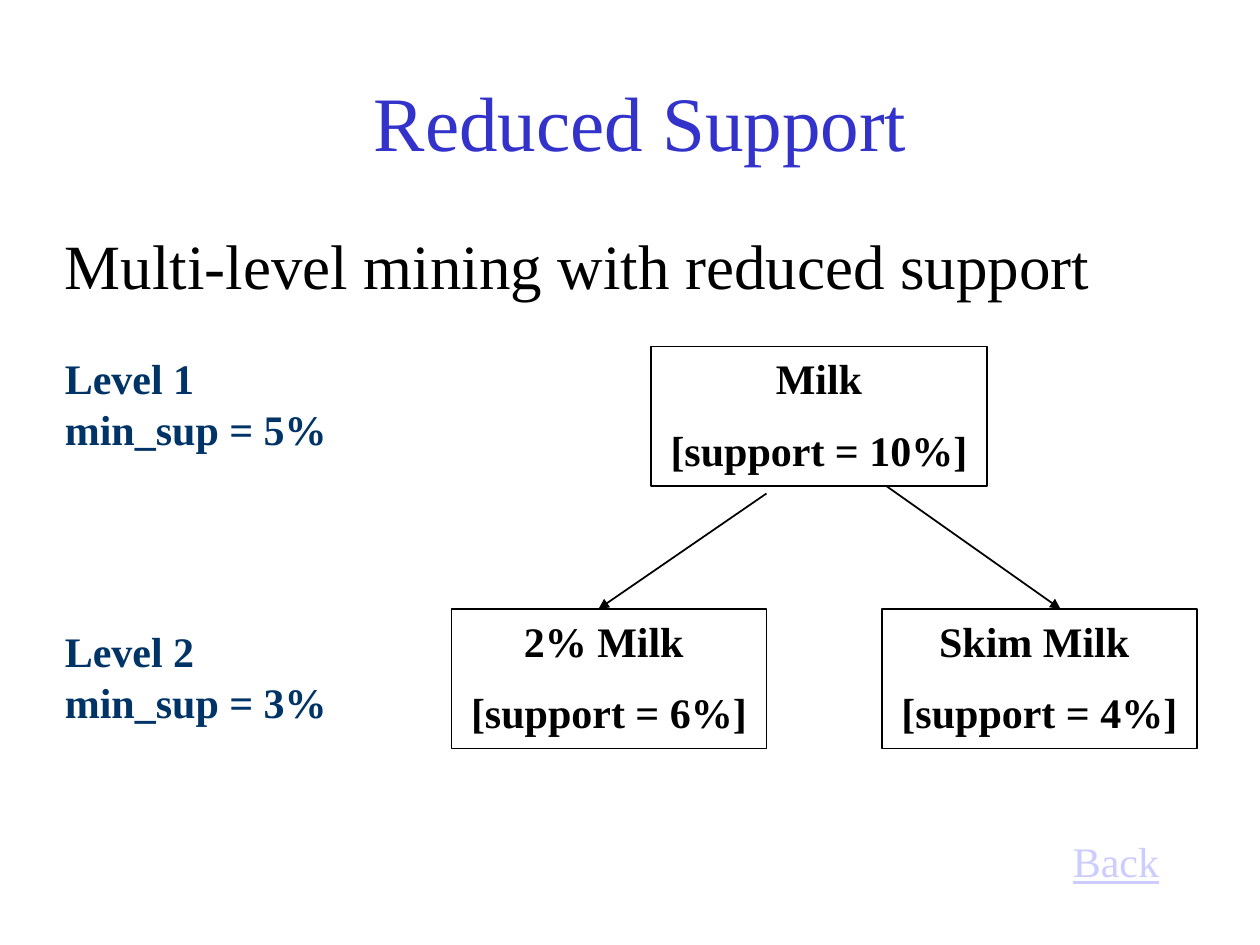
from lxml import etree
from pptx import Presentation
from pptx import util as u
from pptx.dml.color import RGBColor
from pptx.enum import shapes, text
from pptx.oxml.ns import qn

CELL = u.Inches(10) / 120  # the page is a grid of 120 columns by 90 rows
FONT = "Times New Roman"
BLACK, WHITE, NAVY = "000000", "FFFFFF", "003366"
BOX_HEIGHT = 13.3
LEVEL_SIZE = (27.4, 10.8)


def grid(*cells):
    return [u.Emu(round(cell * CELL)) for cell in cells]


def colour(hex_string):
    return RGBColor.from_string(hex_string)


def write(shape, lines, size=24, ink=BLACK, bold=False, underline=False,
          align=text.PP_ALIGN.LEFT, anchor=text.MSO_ANCHOR.TOP, gap=0, hanging=0):
    """Fill a shape with one paragraph per line; gap is the space between them."""
    frame = shape.text_frame
    frame.word_wrap = True
    frame.vertical_anchor = anchor
    for index, line in enumerate(lines):
        para = frame.paragraphs[0] if index == 0 else frame.add_paragraph()
        para.alignment = align
        if index and gap:
            para.space_before = u.Pt(gap)
        if hanging:
            properties = para._p.get_or_add_pPr()
            properties.set("marL", str(u.Inches(hanging)))
            properties.set("indent", str(-u.Inches(hanging)))
        span = para.add_run()
        span.text = line
        span.font.name = FONT
        span.font.size = u.Pt(size)
        span.font.bold = bold
        span.font.underline = underline
        span.font.color.rgb = colour(ink)


def add_label(page, place, lines, **style):
    write(page.shapes.add_textbox(*grid(*place)), lines, **style)


def add_item_box(page, left, top, width, lines):
    box = page.shapes.add_shape(shapes.MSO_SHAPE.RECTANGLE,
                                *grid(left, top, width, BOX_HEIGHT))
    box.shadow.inherit = False
    box.fill.solid()
    box.fill.fore_color.rgb = colour(WHITE)
    box.line.color.rgb = colour(BLACK)
    box.line.width = u.Pt(0.75)
    write(box, lines, bold=True, align=text.PP_ALIGN.CENTER, gap=12)


def add_arrow(page, start, end):
    arrow = page.shapes.add_connector(shapes.MSO_CONNECTOR.STRAIGHT,
                                      *grid(*start, *end))
    arrow.line.color.rgb = colour(BLACK)
    arrow.line.width = u.Pt(1)
    etree.SubElement(arrow.line._get_or_add_ln(), qn("a:tailEnd"), type="triangle")
    etree.SubElement(arrow._element.spPr, qn("a:effectLst"))


def main():
    deck = Presentation()
    deck.slide_width, deck.slide_height = grid(120, 90)
    page = deck.slides.add_slide(deck.slide_layouts[6])

    add_label(page, (10, 4, 102, 15), ["Reduced Support"], size=44, ink="3333CC",
              align=text.PP_ALIGN.CENTER, anchor=text.MSO_ANCHOR.MIDDLE)
    add_label(page, (5, 21, 110, 13), ["Multi-level mining with reduced support"],
              size=36, hanging=0.38)

    for left, name, support in ((43, "2% Milk ", 6), (84, "Skim Milk ", 4)):
        add_item_box(page, left, 58, 30, [name, f"[support = {support}%]"])
    add_arrow(page, (73, 47), (57, 58))
    add_arrow(page, (84, 46), (101, 58))

    for level, top, support in ((1, 33, 5), (2, 59, 3)):
        add_label(page, (5, top, *LEVEL_SIZE),
                  [f"Level {level}", f"min_sup = {support}%"], ink=NAVY, bold=True)
    add_label(page, (101, 79, 10.7, 6), ["Back"], ink="CCCCFF", underline=True)

    # The parent box comes last so that it covers the start of the right arrow.
    add_item_box(page, 62, 33, 32, ["Milk", "[support = 10%]"])
    deck.save("out.pptx")


if __name__ == "__main__":
    main()
